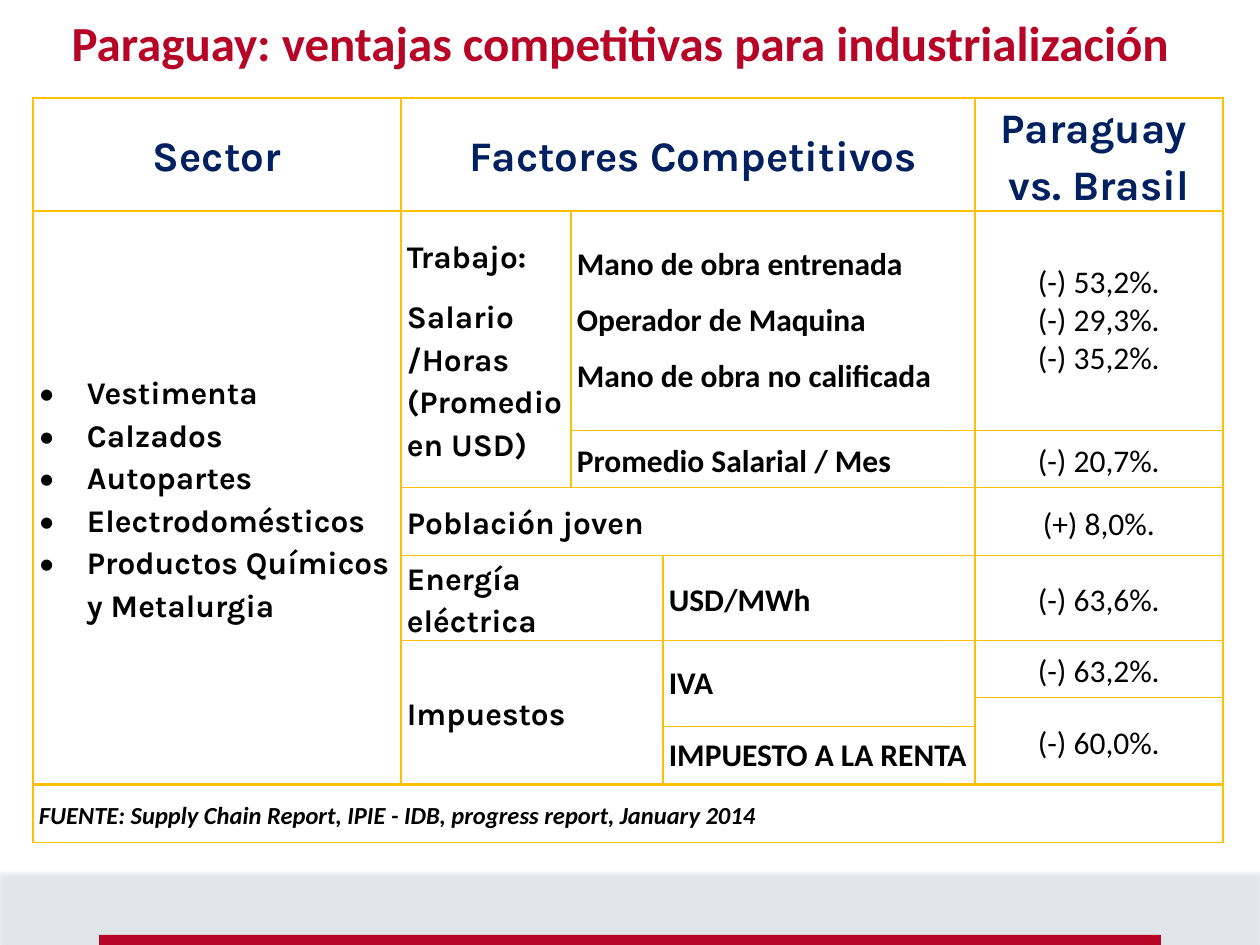
from dataclasses import dataclass
from itertools import product

from lxml.etree import SubElement
from pptx import Presentation
from pptx.dml.color import RGBColor
from pptx.enum.shapes import MSO_SHAPE
from pptx.enum.text import MSO_ANCHOR, PP_ALIGN
from pptx.oxml import parse_xml
from pptx.oxml.ns import nsdecls, qn
from pptx.util import Emu, Pt

SCALE = 914400 / 126
COLORS = {
    "red": "B60527",
    "navy": "002060",
    "black": "000000",
    "gold": "FFC000",
    "ice": "DBEEF4",
}
NO_STYLE = "{2D5ABB26-0587-4C30-8999-92F81FD0307C}"
COLUMNS = [368, 170, 92, 312, 248]
ROWS = [66, 220, 57, 68, 67, 57, 29, 58, 58]
HANGING = 48


@dataclass(frozen=True)
class Style:
    font: str = "Calibri"
    size: int = 18
    color: str = "black"
    bold: bool = True
    italic: bool = False
    align: PP_ALIGN = PP_ALIGN.LEFT
    spacing: float = 1.15
    after: int = 0
    hanging: bool = False
    bullet: str = ""


@dataclass(frozen=True)
class Entry:
    row: int
    column: int
    lines: tuple[str, ...]
    style: Style
    row_span: int = 1
    column_span: int = 1


TITLE = Style(size=28, color="red", align=PP_ALIGN.CENTER, spacing=1)
HEADER = Style("Karla", 24, "navy", align=PP_ALIGN.CENTER)
SECTOR = Style("Karla", hanging=True, bullet="•")
FACTOR = Style("Karla", after=10)
DETAIL = Style(after=10)
WORKER = Style(spacing=1, after=10)
TAX = Style(spacing=1)
VALUE = Style(bold=False, align=PP_ALIGN.CENTER, hanging=True)
VALUE_LIST = Style(bold=False, align=PP_ALIGN.CENTER, spacing=1, hanging=True)
SOURCE = Style(size=14, italic=True, hanging=True)

ENTRIES = [
    Entry(0, 0, ("Sector",), HEADER),
    Entry(0, 1, (" Factores Competitivos",), HEADER, 1, 3),
    Entry(0, 4, ("Paraguay ", "vs. Brasil"), HEADER),
    Entry(1, 0, ("Vestimenta", "Calzados", "Autopartes", "Electrodomésticos",
                 "Productos Químicos y Metalurgia"), SECTOR, 7),
    Entry(1, 1, ("Trabajo:", "Salario /Horas (Promedio en USD)"), FACTOR, 2),
    Entry(1, 2, ("Mano de obra entrenada", "Operador de Maquina",
                 "Mano de obra no calificada"), WORKER, 1, 2),
    Entry(1, 4, ("(-) 53,2%.", "(-) 29,3%.", "(-) 35,2%."), VALUE_LIST),
    Entry(2, 2, ("Promedio Salarial / Mes",), DETAIL, 1, 2),
    Entry(2, 4, ("(-) 20,7%.",), VALUE),
    Entry(3, 1, ("Población joven",), FACTOR, 1, 3),
    Entry(3, 4, ("(+) 8,0%.",), VALUE),
    Entry(4, 1, ("Energía eléctrica",), FACTOR, 1, 2),
    Entry(4, 3, ("USD/MWh",), DETAIL),
    Entry(4, 4, ("(-) 63,6%.",), VALUE),
    Entry(5, 1, ("Impuestos",), FACTOR, 3, 2),
    Entry(5, 3, ("IVA",), TAX, 2),
    Entry(5, 4, ("(-) 63,2%.",), VALUE),
    Entry(6, 4, ("(-) 60,0%.",), VALUE, 2),
    Entry(7, 3, ("IMPUESTO A LA RENTA",), TAX),
    Entry(8, 0, ("FUENTE: Supply Chain Report, IPIE - IDB, progress report, January 2014",),
          SOURCE, 1, 5),
]


def px(length: int) -> Emu:
    return Emu(round(length * SCALE))


def rgb(name: str) -> RGBColor:
    return RGBColor.from_string(COLORS[name])


def write(frame, lines: tuple[str, ...], style: Style) -> None:
    for index, line in enumerate(lines):
        para = frame.add_paragraph() if index else frame.paragraphs[0]
        para.add_run().text = line
        properties = para._p.get_or_add_pPr()
        if style.hanging:
            properties.set("marL", str(px(HANGING)))
            properties.set("indent", str(-px(HANGING)))
        if style.bullet:
            SubElement(properties, qn("a:buFont"), typeface="Calibri")
            SubElement(properties, qn("a:buChar"), char=style.bullet)
        para.alignment = style.align
        para.line_spacing = style.spacing
        para.space_after = Pt(style.after)
        font = para.font
        font.name, font.size = style.font, Pt(style.size)
        font.bold, font.italic = style.bold, style.italic
        font.color.rgb = rgb(style.color)


def set_borders(cell, widths: dict[str, float]) -> None:
    properties = cell._tc.get_or_add_tcPr()
    for index, (side, width) in enumerate(widths.items()):
        properties.insert(index, parse_xml(
            f'<a:ln{side} {nsdecls("a")} w="{Pt(width)}"><a:solidFill>'
            f'<a:srgbClr val="{COLORS["gold"]}"/></a:solidFill></a:ln{side}>'))


def add_bar(page, left: int, top: int, width: int, height: int, color: str):
    bar = page.shapes.add_shape(
        MSO_SHAPE.RECTANGLE, px(left), px(top), px(width), px(height))
    bar.shadow.inherit = False
    bar.fill.solid()
    bar.fill.fore_color.rgb = rgb(color)
    bar.line.fill.background()
    return bar


def soften(bar) -> None:
    properties = bar._element.spPr
    tint = properties.find(qn("a:solidFill")).find(qn("a:srgbClr"))
    SubElement(tint, qn("a:alpha"), val="32000")
    shadow = SubElement(
        properties.find(qn("a:effectLst")), qn("a:outerShdw"),
        blurRad=str(Pt(3.1)), dist=str(Pt(1.8)), dir="5400000", rotWithShape="0")
    shade = SubElement(shadow, qn("a:srgbClr"), val=COLORS["black"])
    SubElement(shade, qn("a:alpha"), val="35000")


def add_comparison(page) -> None:
    table = page.shapes.add_table(
        len(ROWS), len(COLUMNS), px(33), px(98), px(sum(COLUMNS)), px(sum(ROWS))).table
    table.first_row = table.horz_banding = False
    table._tbl.tblPr.find(qn("a:tableStyleId")).text = NO_STYLE
    for column, width in zip(table.columns, COLUMNS):
        column.width = px(width)
    for row, height in zip(table.rows, ROWS):
        row.height = px(height)
    last = len(ROWS) - 1
    for row, column in product(range(len(ROWS)), range(len(COLUMNS))):
        cell = table.cell(row, column)
        cell.fill.background()
        cell.vertical_anchor = MSO_ANCHOR.MIDDLE
        cell.margin_left = cell.margin_right = px(6)
        cell.margin_top = cell.margin_bottom = 0
        set_borders(cell, {
            "L": 1.5 if row == 0 and column else 1,
            "R": 1.5 if row == 0 and column < len(COLUMNS) - 1 else 1,
            "T": 1.5 if row in (0, 1, last) else 1,
            "B": 1.5 if row in (0, last - 1) else 1,
        })
    for entry in ENTRIES:
        cell = table.cell(entry.row, entry.column)
        if entry.row_span * entry.column_span > 1:
            cell.merge(table.cell(entry.row + entry.row_span - 1,
                                  entry.column + entry.column_span - 1))
        write(cell.text_frame, entry.lines, entry.style)


def add_title(page) -> None:
    box = page.shapes.add_textbox(px(30), px(6), px(1180), px(86))
    box.text_frame.word_wrap = True
    write(box.text_frame, ("Paraguay: ventajas competitivas para industrialización",), TITLE)


def main() -> None:
    deck = Presentation()
    deck.slide_width, deck.slide_height = px(1260), px(945)
    page = deck.slides.add_slide(deck.slide_layouts[6])
    soften(add_bar(page, 0, 872, 1260, 73, "ice"))
    add_bar(page, 99, 935, 1062, 32, "red")
    add_comparison(page)
    add_title(page)
    deck.save("out.pptx")


if __name__ == "__main__":
    main()
